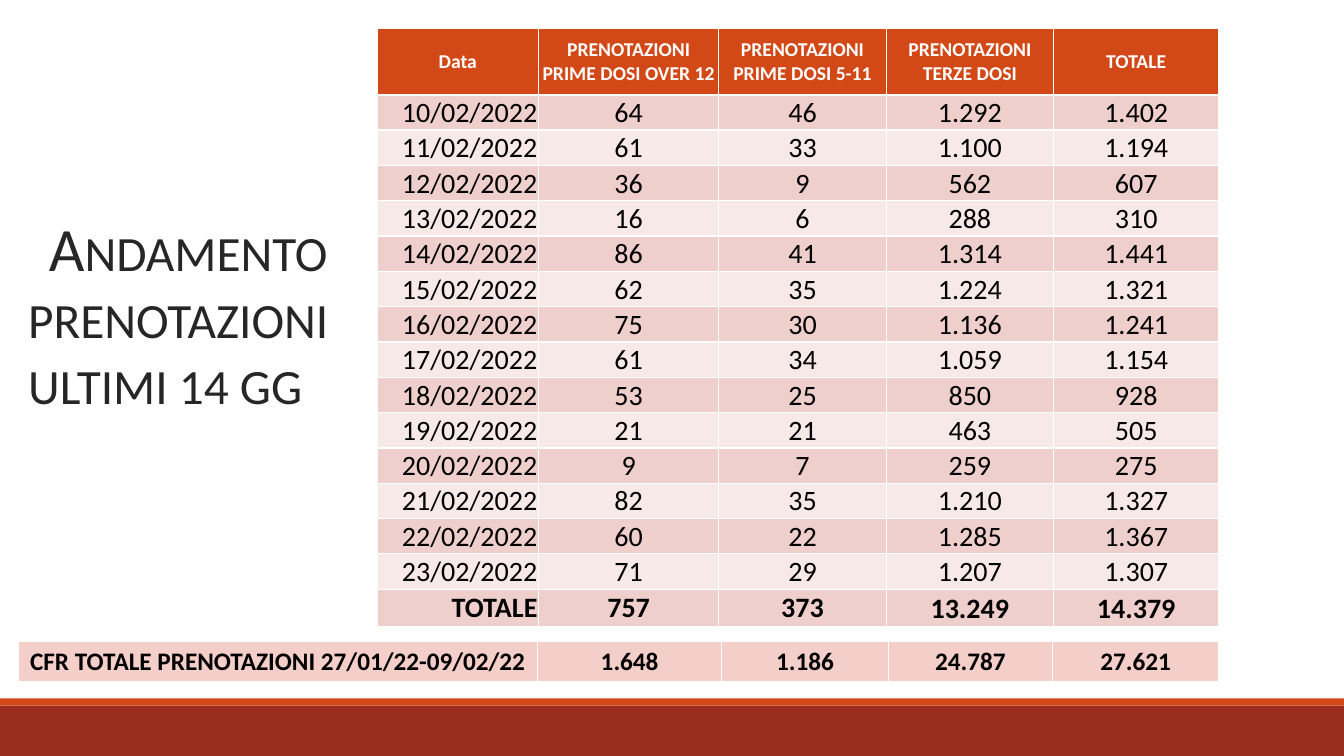
from pptx import Presentation
from pptx.dml.color import RGBColor
from pptx.enum.shapes import MSO_SHAPE
from pptx.enum.text import MSO_ANCHOR, MSO_AUTO_SIZE, PP_ALIGN
from pptx.oxml.ns import qn
from pptx.util import Inches, Pt
from lxml import etree

RECT = MSO_SHAPE.RECTANGLE
TOP, MIDDLE, BOTTOM = MSO_ANCHOR.TOP, MSO_ANCHOR.MIDDLE, MSO_ANCHOR.BOTTOM
LEFT, CENTER, RIGHT = PP_ALIGN.LEFT, PP_ALIGN.CENTER, PP_ALIGN.RIGHT

FONT = "Calibri"
WHITE, BLACK, GREY = "FFFFFF", "000000", "262626"
ORANGE, RED = "D34817", "9B2D1F"
BANDS = ("F7E9E7", "EFCFCC")
COMPARE_FILL = "F4CEC9"
SLIDE_W, SLIDE_H = 13.33, 7.5

HEADERS = ["Data", "PRENOTAZIONI PRIME DOSI OVER 12", "PRENOTAZIONI PRIME DOSI 5-11",
           "PRENOTAZIONI TERZE DOSI", "TOTALE"]
FIRST_DAY = 10
# First doses over 12, first doses 5-11, third doses
BOOKINGS = [
    (64, 46, 1292), (61, 33, 1100), (36, 9, 562), (16, 6, 288), (86, 41, 1314),
    (62, 35, 1224), (75, 30, 1136), (61, 34, 1059), (53, 25, 850), (21, 21, 463),
    (9, 7, 259), (82, 35, 1210), (60, 22, 1285), (71, 29, 1207),
]
PREVIOUS = (1648, 1186, 24787)


def rgb(color):
    return RGBColor.from_string(color)


def with_total(label, values):
    """Row of label, values and their sum, with dots between thousands."""
    return [label] + [f"{v:,}".replace(",", ".") for v in (*values, sum(values))]


def add_run(p, text, size, color, bold=False):
    r = p.add_run()
    r.text = text
    r.font.name, r.font.size, r.font.bold = FONT, Pt(size), bold
    r.font.color.rgb = rgb(color)
    return r


def add_borders(cell, top=1, bottom=1):
    tcPr = cell._tc.get_or_add_tcPr()
    for side, width in (("L", 1), ("R", 1), ("T", top), ("B", bottom)):
        ln = etree.SubElement(tcPr, qn(f"a:ln{side}"), w=str(Pt(width)))
        fill = etree.SubElement(ln, qn("a:solidFill"))
        etree.SubElement(fill, qn("a:srgbClr"), val=WHITE)


def fill_cell(cell, text, size, fill, color=BLACK, bold=False, align=CENTER,
              anchor=MIDDLE, tight=True, top=1, bottom=1):
    add_borders(cell, top, bottom)
    cell.fill.solid()
    cell.fill.fore_color.rgb = rgb(fill)
    cell.vertical_anchor = anchor
    if tight:
        cell.margin_left = cell.margin_top = cell.margin_right = Inches(0.01)
        cell.margin_bottom = 0
    p = cell.text_frame.paragraphs[0]
    p.alignment = align
    add_run(p, text, size, color, bold)


def add_grid(s, x, y, cols, rows):
    """Unstyled table with the given column widths and row heights."""
    frame = s.shapes.add_table(len(rows), len(cols), Inches(x), Inches(y),
                               Inches(sum(cols)), Inches(sum(rows)))
    table = frame.table
    table.first_row = table.horz_banding = False
    for column, width in zip(table.columns, cols):
        column.width = Inches(width)
    for row, height in zip(table.rows, rows):
        row.height = Inches(height)
    return table


def add_footer_bands(s, y, stripe_h):
    for top, height, color in ((y + stripe_h, SLIDE_H - y - stripe_h, RED),
                               (y, stripe_h, ORANGE)):
        band = s.shapes.add_shape(RECT, 0, Inches(top), Inches(SLIDE_W), Inches(height))
        band.shadow.inherit = False
        band.fill.solid()
        band.fill.fore_color.rgb = rgb(color)
        band.line.fill.background()


def add_title(s, x, y, w, h):
    sp = s.shapes.title
    sp.left, sp.top, sp.width, sp.height = (Inches(v) for v in (x, y, w, h))
    tf = sp.text_frame
    tf.word_wrap, tf.auto_size, tf.vertical_anchor = True, MSO_AUTO_SIZE.NONE, TOP
    tf.margin_left = tf.margin_right = 0
    p = tf.paragraphs[0]
    p.alignment, p.line_spacing = LEFT, 0.9
    p.space_before, p.space_after = Pt(12), Pt(2)
    pPr = p._p.get_or_add_pPr()
    pPr.set("marL", str(Inches(0.1)))
    pPr.set("indent", str(Inches(-0.1)))
    for bullet in pPr.findall(qn("a:buNone")):
        pPr.remove(bullet)
    etree.SubElement(pPr, qn("a:buChar"), char=" ")
    r = add_run(p, "Andamento prenotazioni ultimi 14 gg", 44, GREY)
    r.font._element.set("cap", "small")


def add_daily_table(s, x, y):
    rows = [with_total(f"{FIRST_DAY + i}/02/2022", day) for i, day in enumerate(BOOKINGS)]
    rows.append(with_total("TOTALE", [sum(dose) for dose in zip(*BOOKINGS)]))
    table = add_grid(s, x, y, [1.6, 1.79, 1.66, 1.66, 1.64],
                     [0.66, 0.35] + [0.34] * (len(BOOKINGS) - 1) + [0.37])
    for j, header in enumerate(HEADERS):
        fill_cell(table.cell(0, j), header, 14, ORANGE, WHITE, bold=True, bottom=1.5)
    for i, row in enumerate(rows, start=1):
        is_total = i == len(rows)
        first_bottom = 3 if is_total else 4
        for j, text in enumerate(row):
            fill_cell(table.cell(i, j), text, 20, BANDS[i % 2], bold=is_total,
                      align=CENTER if j else RIGHT,
                      anchor=BOTTOM if j >= first_bottom else MIDDLE,
                      top=1.5 if i == 1 else 1)


def add_comparison_table(s, x, y):
    table = add_grid(s, x, y, [5.15, 1.83, 1.65, 1.63, 1.65], [0.41])
    row = with_total("CFR TOTALE PRENOTAZIONI 27/01/22-09/02/22", PREVIOUS)
    for j, text in enumerate(row):
        fill_cell(table.cell(0, j), text, 18, COMPARE_FILL, bold=True,
                  tight=j > 0, bottom=3)


def main():
    prs = Presentation()
    prs.slide_width, prs.slide_height = Inches(SLIDE_W), Inches(SLIDE_H)
    s = prs.slides.add_slide(prs.slide_layouts.get_by_name("Title Only"))
    add_footer_bands(s, 6.93, 0.07)
    add_title(s, 0.18, 2.12, 3.28, 3.95)
    add_daily_table(s, 3.74, 0.28)
    add_comparison_table(s, 0.18, 6.36)
    prs.save("out.pptx")


if __name__ == "__main__":
    main()
